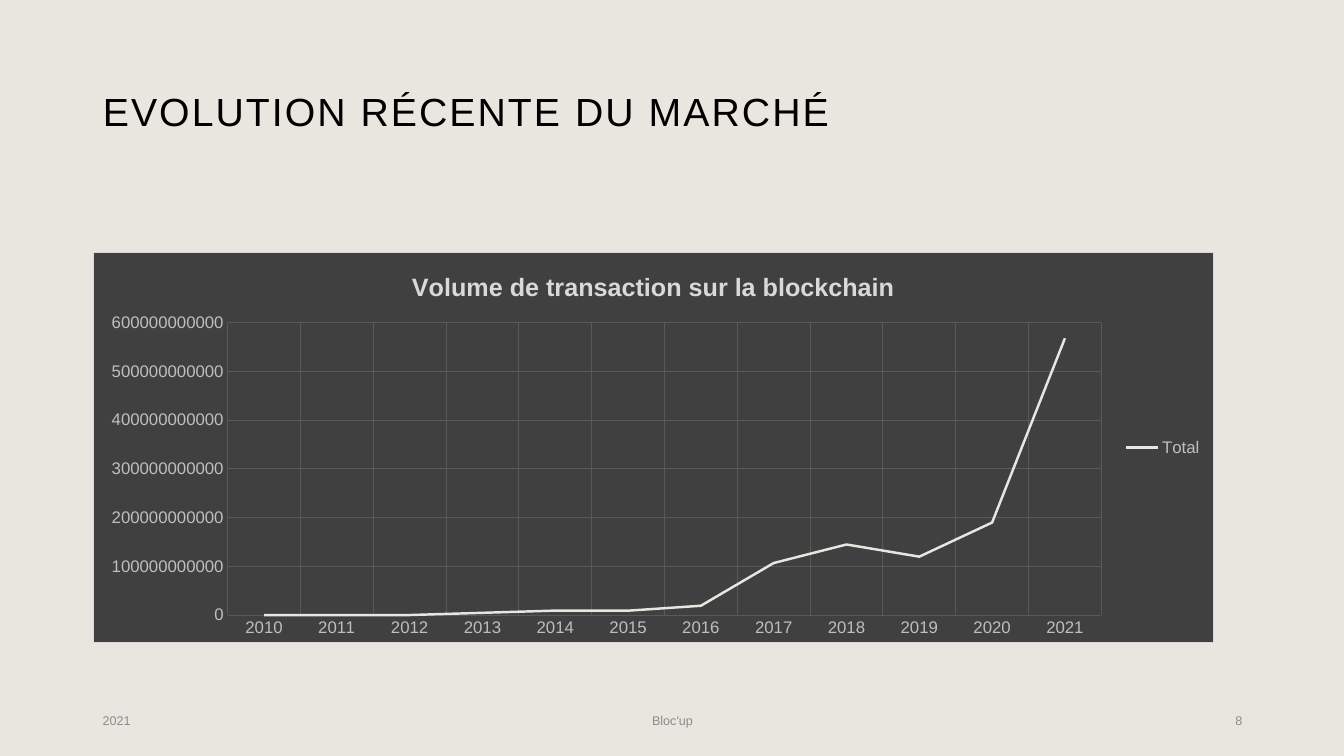
from lxml import etree
from pptx import Presentation
from pptx.chart.data import CategoryChartData
from pptx.dml.color import RGBColor
from pptx.enum.chart import XL_CHART_TYPE as CT, XL_LEGEND_POSITION as LP
from pptx.enum.chart import XL_MARKER_STYLE as MS, XL_TICK_MARK as TM
from pptx.enum.text import MSO_ANCHOR as ANC, PP_ALIGN as AL
from pptx.oxml import parse_xml
from pptx.oxml.ns import nsdecls, qn
from pptx.util import Inches, Pt

COLORS = {"bg": "E9E6DF", "title": "000000", "footer": "8C8C8C", "panel": "404040",
          "border": "D9D9D9", "heading": "D9D9D9", "label": "BFBFBF", "grid": "595959"}
FONT = "Arial"
VOLUMES = {2010: 0, 2011: 0.1, 2012: 0.3, 2013: 4.8, 2014: 9.4, 2015: 9.2,
           2016: 19.4, 2017: 107, 2018: 145, 2019: 120, 2020: 190, 2021: 568}
BILLION = 10 ** 9


def rgb(name):
    return RGBColor.from_string(COLORS[name])


def style(font, size, color, bold=False):
    font.name, font.size, font.bold = FONT, Pt(size), bold
    font.color.rgb = rgb(color)


def add_run(p, text, size, color, bold=False):
    r = p.add_run()
    r.text = text
    style(r.font, size, color, bold)
    return r


def add_title(s, box, text):
    title = s.shapes.title
    title.left, title.top, title.width, title.height = map(Inches, box)
    tf = title.text_frame
    tf.vertical_anchor, tf.word_wrap = ANC.MIDDLE, True
    p = tf.paragraphs[0]
    p.alignment, p.line_spacing = AL.LEFT, 0.9
    r = add_run(p, text, 28, "title")
    r.font._element.set("spc", "150")


def add_footer(s, box, texts):
    left, top, width, height = box
    side, middle = 3, 4.5
    cells = [(left, side, AL.LEFT), (left + (width - middle) / 2, middle, AL.CENTER),
             (left + width - side, side, AL.RIGHT)]
    for text, (x, w, align) in zip(texts, cells):
        tf = s.shapes.add_textbox(*map(Inches, (x, top, w, height))).text_frame
        tf.word_wrap, tf.vertical_anchor = True, ANC.MIDDLE
        p = tf.paragraphs[0]
        p.alignment = align
        add_run(p, text, 9, "footer")


def fill_panel(chart):
    panel = parse_xml(
        f'<c:spPr {nsdecls("c", "a")}>'
        f'<a:solidFill><a:srgbClr val="{COLORS["panel"]}"/></a:solidFill>'
        f'<a:ln w="9525"><a:solidFill><a:srgbClr val="{COLORS["border"]}"/></a:solidFill></a:ln>'
        '</c:spPr>')
    chart._chartSpace.find(qn("c:chart")).addnext(panel)


def place_plot(chart, x, y, w, h):
    area = chart._chartSpace.find(qn("c:chart")).find(qn("c:plotArea"))
    for old in area.findall(qn("c:layout")):
        area.remove(old)
    layout = etree.Element(qn("c:layout"))
    manual = etree.SubElement(layout, qn("c:manualLayout"))
    settings = {"layoutTarget": "inner", "xMode": "edge", "yMode": "edge",
                "x": x, "y": y, "w": w, "h": h}
    for tag, value in settings.items():
        etree.SubElement(manual, qn(f"c:{tag}")).set("val", str(value))
    area.insert(0, layout)


def add_volume_chart(s, box):
    data = CategoryChartData(number_format="0")
    data.categories = [str(year) for year in VOLUMES]
    data.add_series("Total", [round(v * BILLION) for v in VOLUMES.values()])
    chart = s.shapes.add_chart(CT.LINE_STACKED, *map(Inches, box), data).chart
    style(chart.font, 12, "label")
    fill_panel(chart)

    chart.has_title = True
    p = chart.chart_title.text_frame.paragraphs[0]
    add_run(p, "Volume de transaction sur la blockchain", 18, "heading", True)
    chart.chart_title.include_in_layout = False

    chart.has_legend = True
    chart.legend.position = LP.RIGHT
    chart.legend.include_in_layout = False
    style(chart.legend.font, 12, "label")

    for axis in (chart.category_axis, chart.value_axis):
        axis.major_tick_mark = axis.minor_tick_mark = TM.NONE
        axis.has_major_gridlines = True
        grid = axis.major_gridlines.format.line
        grid.color.rgb, grid.width = rgb("grid"), Pt(0.75)
        axis.format.line.fill.background()
        style(axis.tick_labels.font, 12, "label")
    values = chart.value_axis
    values.minimum_scale, values.maximum_scale = 0, 600 * BILLION
    values.major_unit = 100 * BILLION

    chart.plots[0].vary_by_categories = False
    total = chart.plots[0].series[0]
    total.smooth = False
    total.marker.style = MS.NONE
    total.format.line.color.rgb = rgb("bg")
    total.format.line.width = Pt(1.75)
    place_plot(chart, 0.12, 0.18, 0.78, 0.75)


def main():
    prs = Presentation()
    prs.slide_width, prs.slide_height = Inches(13.33), Inches(7.5)
    s = prs.slides.add_slide(prs.slide_layouts[5])
    s.background.fill.solid()
    s.background.fill.fore_color.rgb = rgb("bg")
    add_title(s, (0.92, 0.4, 11.5, 1.45), "EVOLUTION RÉCENTE DU MARCHÉ")
    add_volume_chart(s, (0.92, 2.5, 11.12, 3.88))
    add_footer(s, (0.92, 6.95, 11.5, 0.4), ("2021", "Bloc'up", "8"))
    prs.save("out.pptx")


if __name__ == "__main__":
    main()
